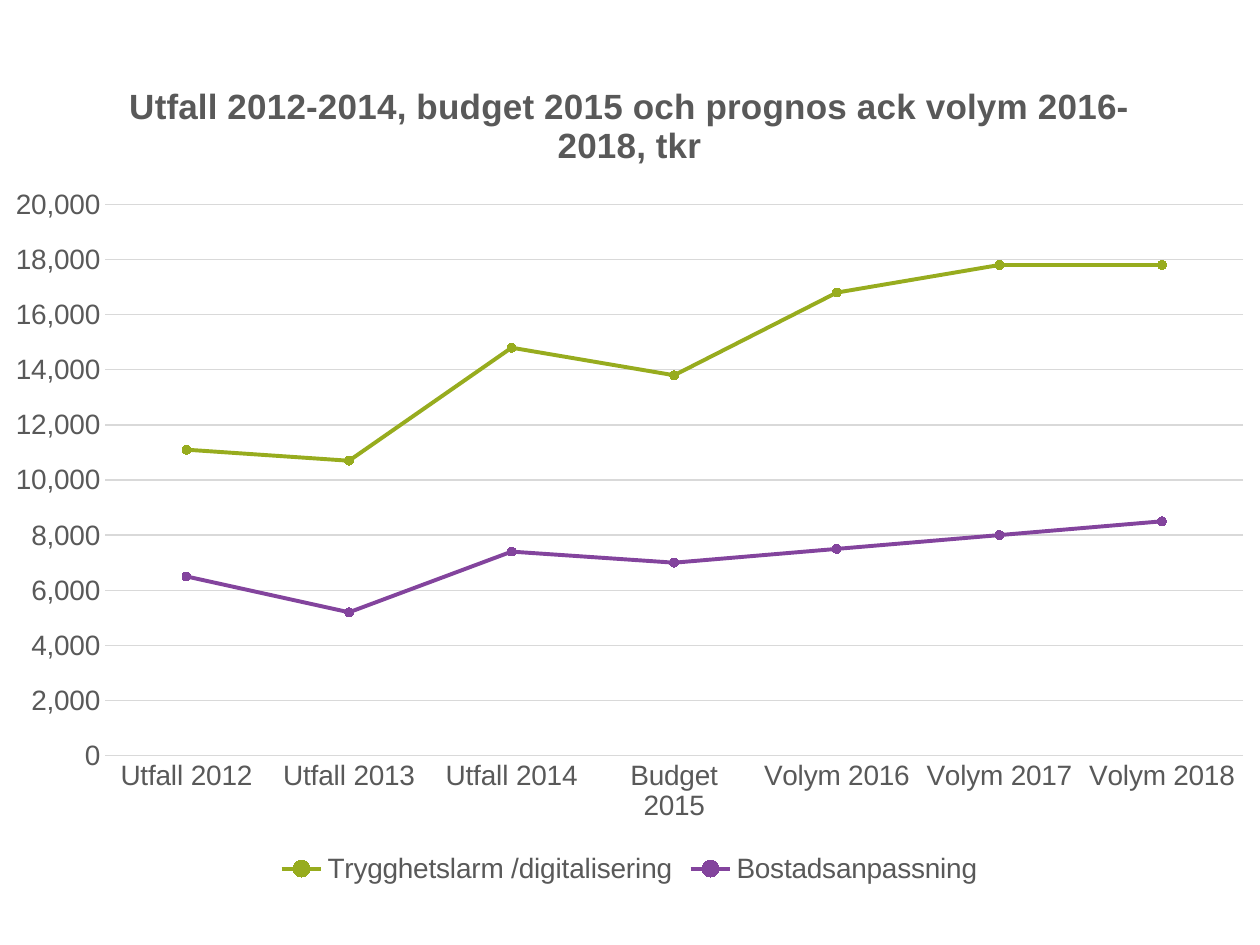
from dataclasses import dataclass

from lxml.etree import SubElement
from pptx import Presentation
from pptx.chart.data import CategoryChartData
from pptx.dml.color import RGBColor
from pptx.enum.chart import XL_CHART_TYPE, XL_LEGEND_POSITION, XL_MARKER_STYLE, XL_TICK_MARK
from pptx.oxml.ns import qn
from pptx.util import Cm, Pt

GREY = "595959"
PALE = "D9D9D9"


@dataclass
class Trend:
    name: str
    vals: tuple[int, ...]
    color: str


YEARS = ("Utfall 2012", "Utfall 2013", "Utfall 2014", "Budget 2015",
         "Volym 2016", "Volym 2017", "Volym 2018")
TRENDS = (
    Trend("Trygghetslarm /digitalisering",
          (11100, 10700, 14800, 13800, 16800, 17800, 17800), "97AC1E"),
    Trend("Bostadsanpassning",
          (6500, 5200, 7400, 7000, 7500, 8000, 8500), "83449D"),
)


def paint(color, tone: str) -> None:
    color.rgb = RGBColor.from_string(tone)


def set_font(font, size: float, bold: bool = False) -> None:
    font.name = "Arial"
    font.size = Pt(size)
    font.bold = bold
    paint(font.color, GREY)


def set_line(line, tone: str, width: float) -> None:
    paint(line.color, tone)
    line.width = Pt(width)


def set_plot(chart, **box: float) -> None:
    area = chart.plots[0]._element.getparent()
    layout = area.find(qn("c:layout"))
    if layout is None:
        layout = SubElement(area, qn("c:layout"))
        area.insert(0, layout)
    manual = SubElement(layout, qn("c:manualLayout"))
    modes = {"layoutTarget": "inner", "xMode": "edge", "yMode": "edge"}
    for tag, val in {**modes, **box}.items():
        SubElement(manual, qn(f"c:{tag}")).set("val", str(val))


def set_title(chart, text: str) -> None:
    frame = chart.chart_title.text_frame
    frame.text = text
    set_font(frame.paragraphs[0].runs[0].font, 20, True)
    chart.chart_title.include_in_layout = False


def set_axes(chart) -> None:
    for axis in (chart.category_axis, chart.value_axis):
        axis.major_tick_mark = XL_TICK_MARK.NONE
        axis.minor_tick_mark = XL_TICK_MARK.NONE
        set_font(axis.tick_labels.font, 16)
    set_line(chart.category_axis.format.line, PALE, 0.75)
    axis = chart.value_axis
    axis.format.line.fill.background()
    axis.minimum_scale, axis.maximum_scale, axis.major_unit = 0, 20000, 2000
    axis.has_major_gridlines = True
    set_line(axis.major_gridlines.format.line, PALE, 0.75)
    axis.tick_labels.number_format = "#,##0"
    axis.tick_labels.number_format_is_linked = False


def set_trend(line, trend: Trend) -> None:
    line.smooth = False
    set_line(line.format.line, trend.color, 2.25)
    mark = line.marker
    mark.style = XL_MARKER_STYLE.CIRCLE
    mark.size = 5
    mark.format.fill.solid()
    paint(mark.format.fill.fore_color, trend.color)
    set_line(mark.format.line, trend.color, 0.75)


def add_trends(slide) -> None:
    data = CategoryChartData(number_format="#,##0")
    data.categories = YEARS
    for trend in TRENDS:
        data.add_series(trend.name, trend.vals)
    chart = slide.shapes.add_chart(
        XL_CHART_TYPE.LINE_MARKERS, Cm(-0.2), Cm(1.09), Cm(25.78), Cm(16.84), data).chart
    set_font(chart.font, 16)
    set_title(chart, "Utfall 2012-2014, budget 2015 och prognos ack volym 2016-2018, tkr")
    set_axes(chart)
    set_plot(chart, x=0.09, y=0.18, w=0.89, h=0.66)
    chart.plots[0].vary_by_categories = False
    for line, trend in zip(chart.plots[0].series, TRENDS):
        set_trend(line, trend)
    chart.has_legend = True
    chart.legend.position = XL_LEGEND_POSITION.BOTTOM
    chart.legend.include_in_layout = False
    set_font(chart.legend.font, 16)


def main() -> None:
    deck = Presentation()
    deck.slide_width, deck.slide_height = Cm(25.4), Cm(19.05)
    add_trends(deck.slides.add_slide(deck.slide_layouts[6]))
    deck.save("out.pptx")


if __name__ == "__main__":
    main()
